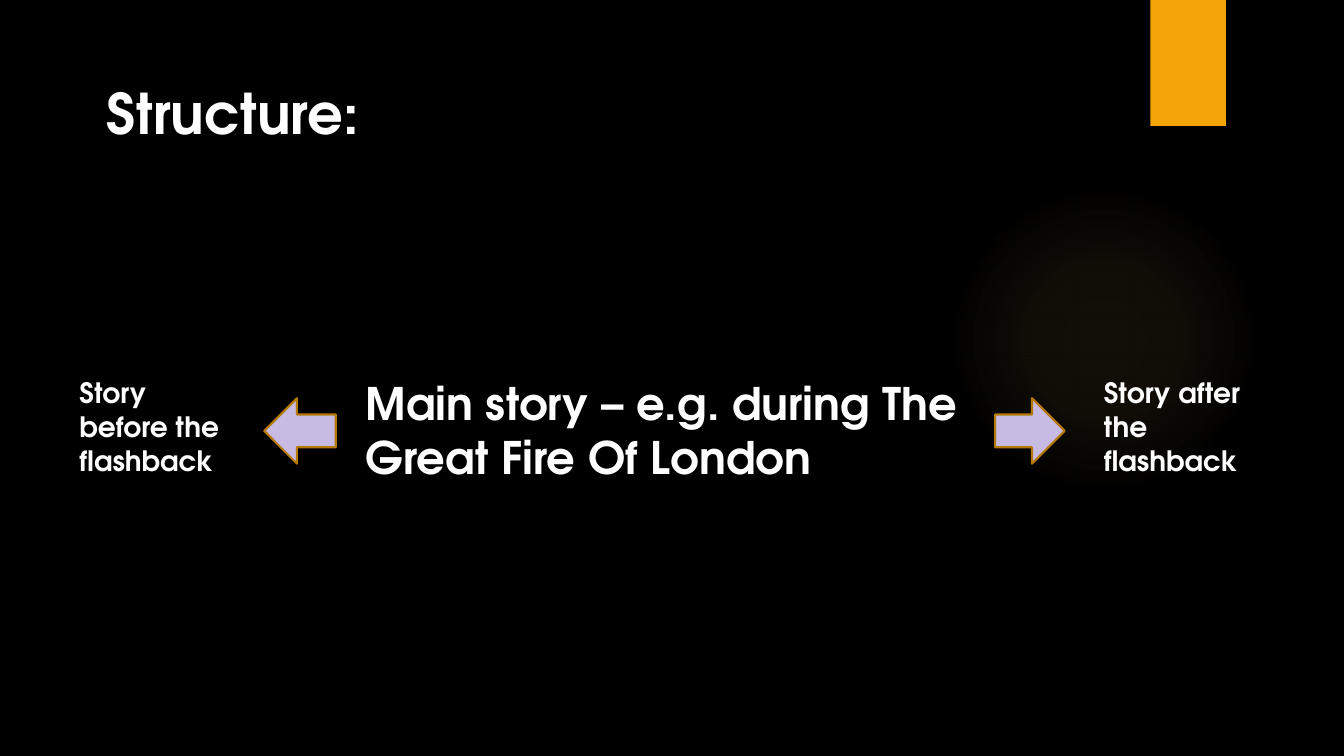
"""Build the flashback story structure slide."""
from dataclasses import dataclass

from pptx import Presentation
from pptx.dml.color import RGBColor
from pptx.enum.shapes import MSO_SHAPE
from pptx.enum.text import MSO_ANCHOR
from pptx.oxml import parse_xml
from pptx.oxml.ns import nsdecls
from pptx.util import Inches, Pt

OVAL, RECT = MSO_SHAPE.OVAL, MSO_SHAPE.RECTANGLE
LEFT_ARROW, RIGHT_ARROW = MSO_SHAPE.LEFT_ARROW, MSO_SHAPE.RIGHT_ARROW
TOP = MSO_ANCHOR.TOP


@dataclass(frozen=True)
class Theme:
    font: str = "TeX Gyre Adventor"
    background: str = "000000"
    text: str = "FFFFFF"
    glow: str = "FAC96A"
    tab: str = "F5A408"
    arrow: str = "C7BAE3"
    arrow_line: str = "B57906"
    title_size: int = 40
    main_size: int = 32
    side_size: int = 20


def add_shape(kind, x, y, w, h, fill=None, line=None):
    sp = s.shapes.add_shape(kind, Inches(x), Inches(y), Inches(w), Inches(h))
    sp.shadow.inherit = False
    if fill:
        sp.fill.solid()
        sp.fill.fore_color.rgb = RGBColor.from_string(fill)
    if line:
        sp.line.color.rgb = RGBColor.from_string(line)
        sp.line.width = Pt(1.5)
    else:
        sp.line.fill.background()
    return sp


def add_text(text, x, y, w, h, size, wrap=True):
    sp = s.shapes.add_textbox(Inches(x), Inches(y), Inches(w), Inches(h))
    tf = sp.text_frame
    tf.word_wrap = wrap
    tf.vertical_anchor = TOP
    r = tf.paragraphs[0].add_run()
    r.text = text
    r.font.name = theme.font
    r.font.size = Pt(size)
    r.font.bold = True
    r.font.color.rgb = RGBColor.from_string(theme.text)


theme = Theme()
prs = Presentation()
prs.slide_width, prs.slide_height = Inches(13.33), Inches(7.5)
s = prs.slides.add_slide(prs.slide_layouts[6])
s.background.fill.solid()
s.background.fill.fore_color.rgb = RGBColor.from_string(theme.background)

glow = add_shape(OVAL, 9.41, 1.83, 3.08, 3.08)
stops = "".join(
    f'<a:gs pos="{pos * 1000}"><a:srgbClr val="{theme.glow}">'
    f'<a:alpha val="{alpha * 1000}"/></a:srgbClr></a:gs>'
    for pos, alpha in ((0, 7), (36, 6), (69, 0))
)
glow.element.spPr.insert(2, parse_xml(
    f'<a:gradFill {nsdecls("a")}><a:gsLst>{stops}</a:gsLst><a:path path="circle">'
    '<a:fillToRect l="50000" t="50000" r="50000" b="50000"/></a:path></a:gradFill>'
))
add_shape(RECT, 11.41, 0, 0.75, 1.25, theme.tab)

add_text("Structure:", 0.96, 0.73, 2.74, 2.12, theme.title_size, wrap=False)

row_top = 3.68
for text, x, w, h, size in (
    ("Main story – e.g. during The Great Fire Of London", 3.53, 6.35, 1.18, theme.main_size),
    ("Story before the flashback", 0.69, 1.73, 1.11, theme.side_size),
    ("Story after the flashback", 10.85, 1.75, 1.11, theme.side_size),
):
    add_text(text, x, row_top, w, h, size)

for kind, x, w in ((LEFT_ARROW, 2.62, 0.71), (RIGHT_ARROW, 9.87, 0.69)):
    add_shape(kind, x, 3.95, w, 0.65, theme.arrow, theme.arrow_line)

prs.save("out.pptx")
